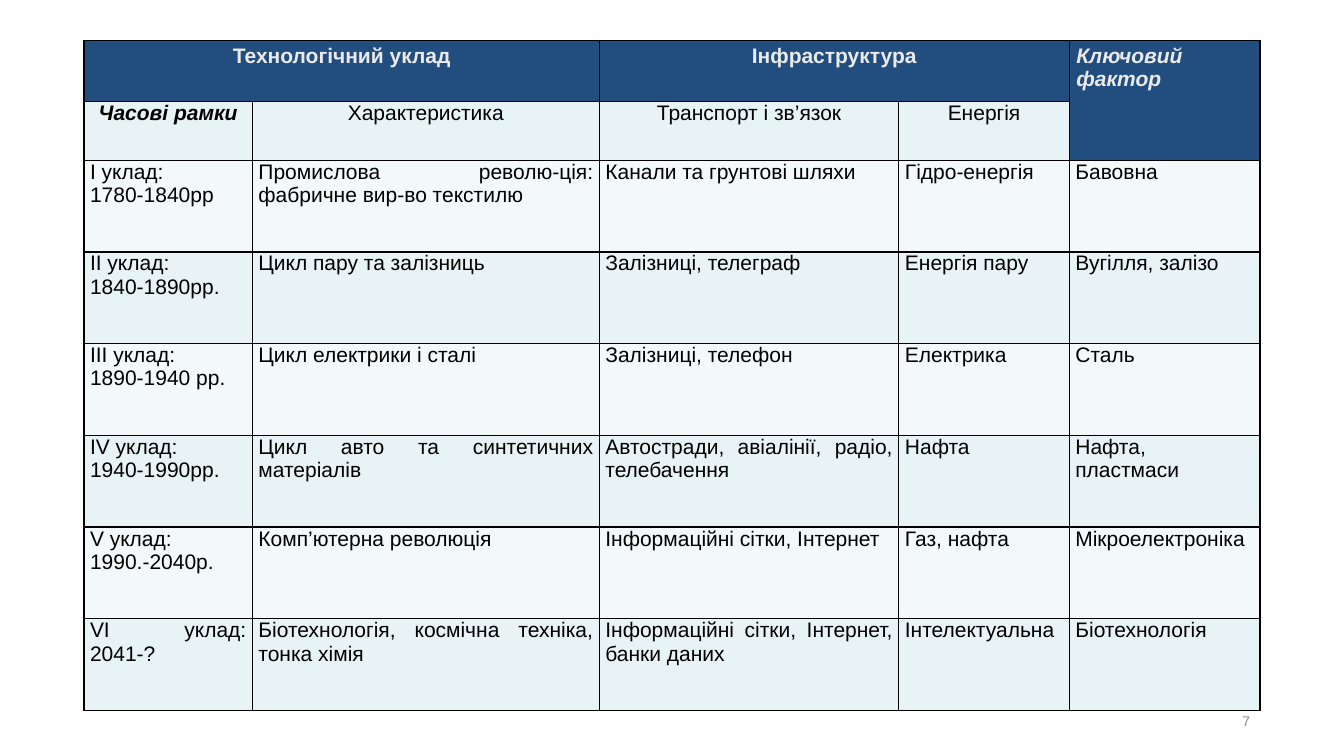
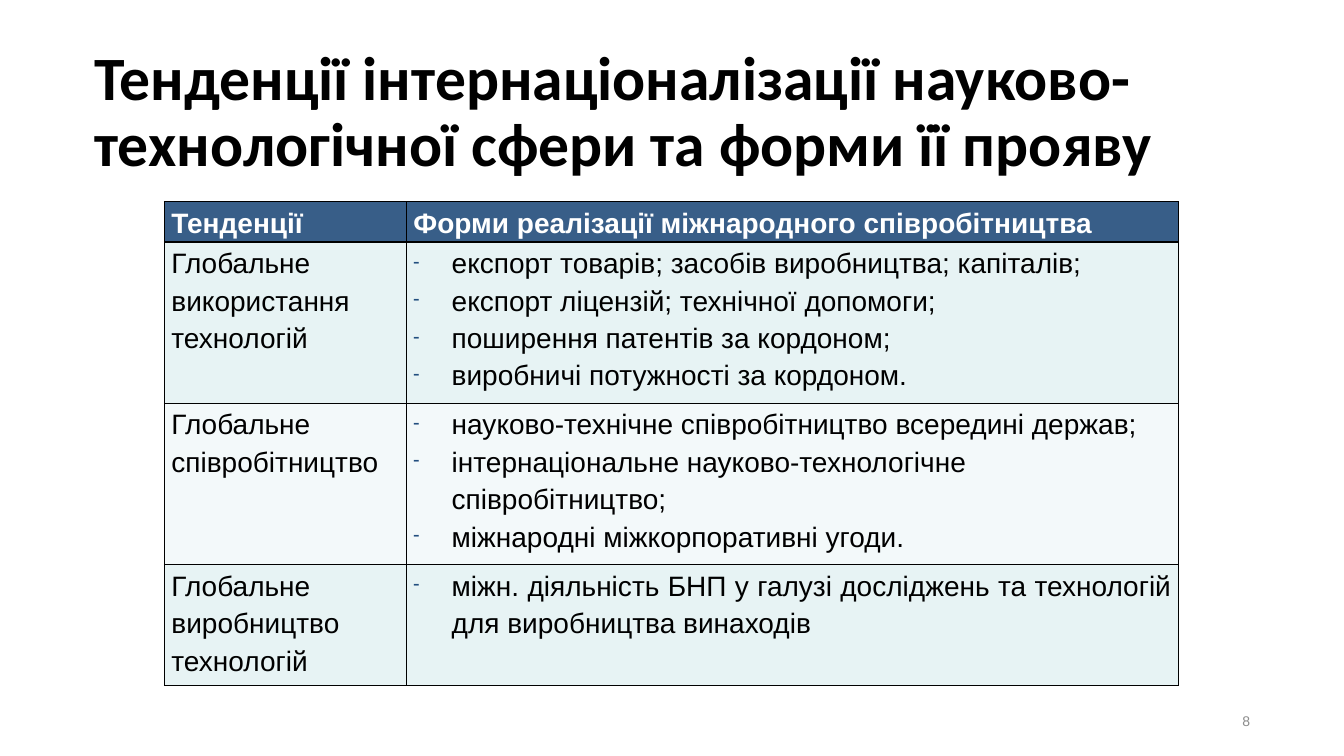
from dataclasses import dataclass

from lxml.etree import SubElement as Sub
from pptx import Presentation
from pptx.dml.color import RGBColor as Rgb
from pptx.enum.text import MSO_ANCHOR as Anc, MSO_AUTO_SIZE as Fit, PP_ALIGN as Al
from pptx.oxml.ns import qn
from pptx.util import Inches as In, Pt


@dataclass(frozen=True)
class Theme:
    """Colours, fonts, type sizes and shared boxes (percent of the slide)."""
    ink: str = "000000"
    navy: str = "224E7F"
    steel: str = "385E88"
    pale: str = "EAEAEA"
    white: str = "FFFFFF"
    gray: str = "8C8C8C"
    bands: tuple = ("F3F9FA", "E7F3F4")
    font: str = "Arial"
    head: str = "Calibri"
    big: int = 44
    mid: int = 20
    small: int = 15
    tiny: int = 10
    title: tuple = (6.25, 5.33, 87.5, 19.33)
    foot: tuple = (70.65, 92.67, 23.1, 5.33)


T = Theme()
W, H = In(13.33), In(7.5)

ERAS = [
    (["І уклад:", "1780-1840рр"],
     "Промислова револю-ція: фабричне вир-во текстилю",
     "Канали та грунтові шляхи", "Гідро-енергія", "Бавовна"),
    (["ІІ уклад:", "1840-1890рр."], "Цикл пару та залізниць",
     "Залізниці, телеграф", "Енергія пару", "Вугілля, залізо"),
    (["ІІІ уклад:", "1890-1940 рр."], "Цикл електрики і сталі",
     "Залізниці, телефон", "Електрика", "Сталь"),
    (["ІV уклад:", "1940-1990рр."], "Цикл авто та синтетичних матеріалів",
     "Автостради, авіалінії, радіо, телебачення", "Нафта", "Нафта, пластмаси"),
    (["V уклад:", "1990.-2040р."], "Комп’ютерна революція",
     "Інформаційні сітки, Інтернет", "Газ, нафта", "Мікроелектроніка"),
    ("VІ уклад: 2041-?", "Біотехнологія, космічна техніка, тонка хімія",
     "Інформаційні сітки, Інтернет, банки даних", "Інтелектуальна",
     "Біотехнологія"),
]

TRENDS = [
    ("Глобальне використання технологій", Al.LEFT,
     ["експорт товарів; засобів виробництва; капіталів;",
      "експорт ліцензій; технічної допомоги;",
      "поширення патентів за кордоном;",
      "виробничі потужності за кордоном."]),
    ("Глобальне співробітництво", Al.LEFT,
     ["науково-технічне співробітництво всередині держав;",
      "інтернаціональне науково-технологічне співробітництво;",
      "міжнародні міжкорпоративні угоди."]),
    ("Глобальне виробництво технологій", Al.JUSTIFY,
     ["міжн. діяльність БНП у галузі досліджень та технологій "
      "для виробництва винаходів"]),
]


def area(x, y, w, h):
    """Turn percent of the slide into lengths."""
    return [round(part * side / 100)
            for part, side in zip((x, y, w, h), (W, H, W, H))]


def dash(para):
    """Give a paragraph a small dash bullet with a hanging indent."""
    props = para._p.get_or_add_pPr()
    props.set("marL", str(In(0.38)))
    props.set("indent", str(-In(0.38)))
    Sub(Sub(props, qn("a:buClr")), qn("a:srgbClr"), val=T.navy)
    Sub(props, qn("a:buSzPct"), val="65000")
    Sub(props, qn("a:buChar"), char="-")


def write(frame, text, size=T.small, color=T.ink, font=T.font, bold=False,
          slant=False, align=Al.JUSTIFY, line=None, after=None, list_=False):
    """Fill a text frame with one paragraph or a list of them."""
    frame.word_wrap = True
    lines = [text] if isinstance(text, str) else text
    for i, words in enumerate(lines):
        para = frame.paragraphs[0] if i == 0 else frame.add_paragraph()
        para.alignment, para.line_spacing, para.space_after = align, line, after
        if list_:
            dash(para)
        run = para.add_run()
        run.text = words
        face = run.font
        face.name, face.size = font, Pt(size)
        face.bold, face.italic = bold, slant
        face.color.rgb = Rgb.from_string(color)


def edge(cell):
    """Draw a thin black border round a cell."""
    props = cell._tc.get_or_add_tcPr()
    for side in ("lnL", "lnR", "lnT", "lnB"):
        rule = Sub(props, qn("a:" + side), w=str(Pt(1)))
        Sub(Sub(rule, qn("a:solidFill")), qn("a:srgbClr"), val=T.ink)


def paint(cell, color):
    """Fill a cell with a plain colour."""
    cell.fill.solid()
    cell.fill.fore_color.rgb = Rgb.from_string(color)


def grid(slide, box, cols, rows, top, pad):
    """Add a bordered, banded table sized by column and row weights."""
    x, y, w, h = area(*box)
    table = slide.shapes.add_table(len(rows), len(cols), x, y, w, h).table
    table.first_row = table.horz_banding = False
    for col, part in zip(table.columns, cols):
        col.width = round(w * part / sum(cols))
    for r, (row, part) in enumerate(zip(table.rows, rows)):
        row.height = round(h * part / sum(rows))
        for cell in row.cells:
            edge(cell)
            paint(cell, T.bands[r % 2] if r else top)
            cell.margin_left = cell.margin_right = In(pad)
            cell.margin_top = cell.margin_bottom = 0
    return table


def page(deck, num, title=None):
    """Add a slide with its number and, if given, its title."""
    slide = deck.slides.add_slide(deck.slide_layouts[5 if title else 6])
    if title:
        head = slide.shapes.title
        head.left, head.top, head.width, head.height = area(*T.title)
        head.text_frame.auto_size = Fit.NONE
        head.text_frame.vertical_anchor = Anc.MIDDLE
        write(head.text_frame, title, size=T.big, font=T.head, bold=True,
              align=Al.LEFT, line=0.9)
    foot = slide.shapes.add_textbox(*area(*T.foot)).text_frame
    foot.vertical_anchor = Anc.MIDDLE
    write(foot, str(num), size=T.tiny, color=T.gray, align=Al.RIGHT, after=Pt(6))
    return slide


def eras(deck):
    """Build the slide of technological eras."""
    table = grid(page(deck, 7), (6.25, 5.33, 87.5, 87.33),
                 (1.67, 3.44, 2.97, 1.69, 1.89), (0.61, 0.48) + (0.91,) * 6,
                 T.navy, 0.06)
    heads = [("Технологічний уклад", 0, (0, 1), Al.CENTER),
             ("Інфраструктура", 2, (0, 3), Al.CENTER),
             ("Ключовий фактор", 4, (1, 4), Al.LEFT)]
    for text, col, end, align in heads:
        cell = table.cell(0, col)
        cell.merge(table.cell(*end))
        cell.margin_left = cell.margin_right = In(0.07)
        cell.margin_top = cell.margin_bottom = In(0.04)
        write(cell.text_frame, text, color=T.pale, bold=True,
              slant=align == Al.LEFT, align=align)
    paint(table.cell(1, 4), T.navy)
    subs = ("Часові рамки", "Характеристика", "Транспорт і зв’язок", "Енергія")
    for c, text in enumerate(subs):
        write(table.cell(1, c).text_frame, text, bold=c == 0, slant=c == 0,
              align=Al.CENTER)
    for r, era in enumerate(ERAS, 2):
        for c, text in enumerate(era):
            write(table.cell(r, c).text_frame, text)


def trends(deck):
    """Build the slide of trends and their forms."""
    slide = page(deck, 8, "Тенденції інтернаціоналізації науково-"
                          "технологічної сфери та форми її прояву")
    table = grid(slide, (12.23, 26.67, 75.47, 63.47), (2.4, 7.66),
                 (0.4, 1.59, 1.59, 1.19), T.steel, 0.07)
    heads = ("Тенденції", "Форми реалізації міжнародного співробітництва")
    for c, text in enumerate(heads):
        write(table.cell(0, c).text_frame, text, size=T.mid, color=T.white,
              bold=True, line=1.2)
    for r, (name, align, forms) in enumerate(TRENDS, 1):
        write(table.cell(r, 0).text_frame, name, size=T.mid, line=1.2)
        write(table.cell(r, 1).text_frame, forms, size=T.mid, align=align,
              line=1.2, list_=True)


def main():
    """Build and save the deck."""
    deck = Presentation()
    deck.slide_width, deck.slide_height = W, H
    eras(deck)
    trends(deck)
    deck.save("out.pptx")


if __name__ == "__main__":
    main()
